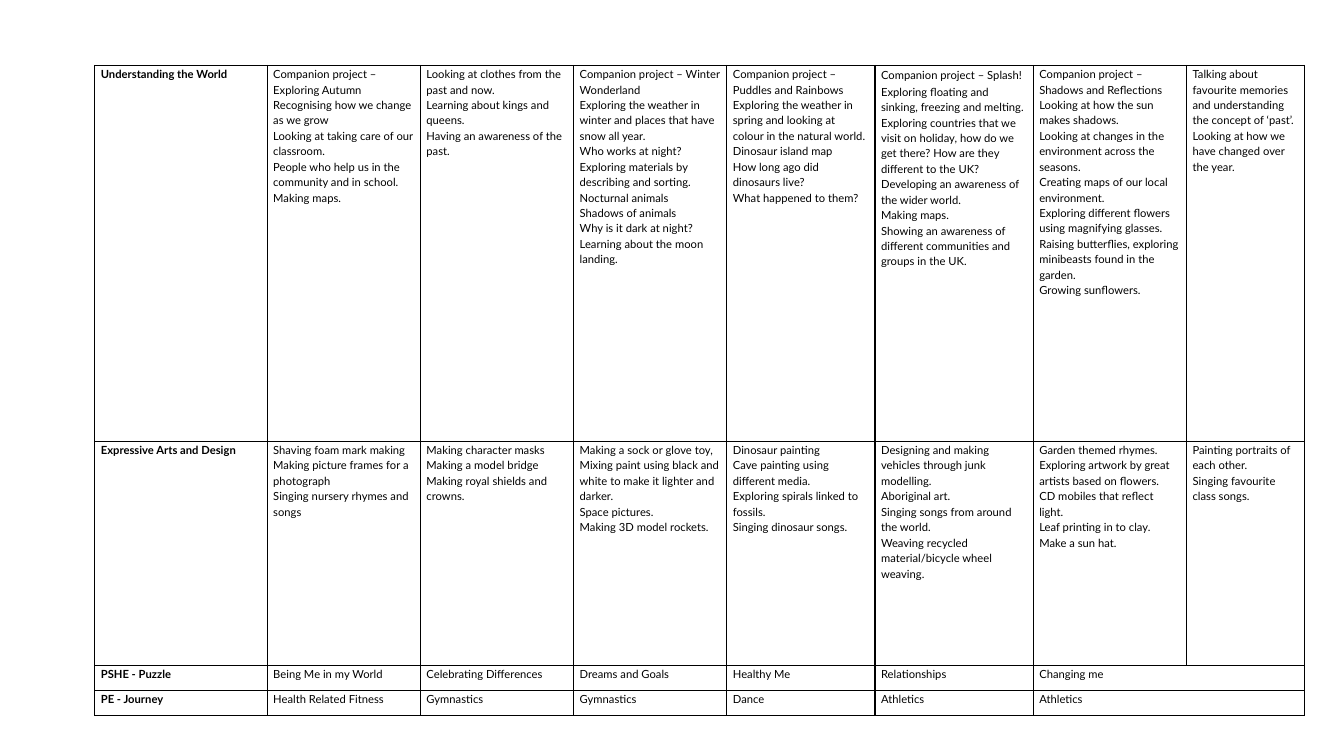
"""Build a slide with a yearly curriculum table."""
from dataclasses import dataclass

from lxml import etree
from pptx import Presentation
from pptx.dml.color import RGBColor
from pptx.oxml.ns import qn
from pptx.util import Inches, Pt

BLACK = RGBColor(0x00, 0x00, 0x00)
WHITE = RGBColor(0xFF, 0xFF, 0xFF)
FONT = "Lato"
SIZE = Pt(8)
WIDTHS = [1.71, 1.52, 1.52, 1.52, 1.47, 1.57, 1.52, 1.17]


@dataclass
class Strand:
    """A curriculum area with the topics of each half term."""
    name: str
    height: float
    terms: list[list[str]]


STRANDS = [
    Strand("Understanding the World", 3.73, [
        ["Companion project – Exploring Autumn",
         "Recognising how we change as we grow",
         "Looking at taking care of our classroom.",
         "People who help us in the community and in school.",
         "Making maps."],
        ["Looking at clothes from the past and now.",
         "Learning about kings and queens.",
         "Having an awareness of the past."],
        ["Companion project – Winter Wonderland",
         "Exploring the weather in winter and places that have snow all year.",
         "Who works at night?",
         "Exploring materials by describing and sorting.",
         "Nocturnal animals",
         "Shadows of animals",
         "Why is it dark at night?",
         "Learning about the moon landing."],
        ["Companion project – Puddles and Rainbows",
         "Exploring the weather in spring and looking at colour in the natural world.",
         "Dinosaur island map",
         "How long ago did dinosaurs live?",
         "What happened to them?"],
        ["Companion project – Splash! ",
         "Exploring floating and sinking, freezing and melting.",
         "Exploring countries that we visit on holiday, how do we get there? "
         "How are they different to the UK?",
         "Developing an awareness of the wider world.",
         "Making maps.",
         "Showing an awareness of different communities and groups in the UK."],
        ["Companion project – Shadows and Reflections",
         "Looking at how the sun makes shadows.",
         "Looking at changes in the environment across the seasons.",
         "Creating maps of our local environment.",
         "Exploring different flowers using magnifying glasses.",
         "Raising butterflies, exploring minibeasts found in the garden.",
         "Growing sunflowers."],
        ["Talking about favourite memories and understanding the concept of ‘past’.",
         "Looking at how we have changed over the year."],
    ]),
    Strand("Expressive Arts and Design", 2.22, [
        ["Shaving foam mark making",
         "Making picture frames for a photograph",
         "Singing nursery rhymes and songs"],
        ["Making character masks",
         "Making a model bridge",
         "Making royal shields and crowns."],
        ["Making a sock or glove toy,",
         "Mixing paint using black and white to make it lighter and darker.",
         "Space pictures.",
         "Making 3D model rockets."],
        ["Dinosaur painting",
         "Cave painting using different media.",
         "Exploring spirals linked to fossils.",
         "Singing dinosaur songs."],
        ["Designing and making vehicles through junk modelling.",
         "Aboriginal art.",
         "Singing songs from around the world.",
         "Weaving recycled material/bicycle wheel weaving."],
        ["Garden themed rhymes.",
         "Exploring artwork by great artists based on flowers.",
         "CD mobiles that reflect light.",
         "Leaf printing in to clay.",
         "Make a sun hat."],
        ["Painting portraits of each other.",
         "Singing favourite class songs."],
    ]),
    Strand("PSHE - Puzzle", 0.25, [
        ["Being Me in my World"], ["Celebrating Differences"],
        ["Dreams and Goals"], ["Healthy Me"], ["Relationships"],
        ["Changing me"]]),
    Strand("PE - Journey", 0.25, [
        ["Health Related Fitness"], ["Gymnastics"], ["Gymnastics"],
        ["Dance"], ["Athletics"], ["Athletics"]]),
]


def style(cell) -> None:
    """Give a cell its margins, borders and fill."""
    cell.margin_left = cell.margin_right = Inches(0.06)
    cell.margin_top = cell.margin_bottom = 0
    props = cell._tc.get_or_add_tcPr()
    for side in ("a:lnL", "a:lnR", "a:lnT", "a:lnB"):
        line = etree.SubElement(props, qn(side), w=str(Pt(1)))
        fill = etree.SubElement(line, qn("a:solidFill"))
        etree.SubElement(fill, qn("a:srgbClr"), val=str(BLACK))
    cell.fill.solid()
    cell.fill.fore_color.rgb = WHITE


def write(cell, lines: list[str], bold: bool = False) -> None:
    """Write one paragraph per line into a cell."""
    frame = cell.text_frame
    for i, line in enumerate(lines):
        para = frame.add_paragraph() if i else frame.paragraphs[0]
        para.line_spacing = 1.15
        font = para.font
        font.name, font.size, font.bold = FONT, SIZE, bold
        font.color.rgb = BLACK
        text = line.rstrip()
        para.add_run().text = text
        if text != line:
            tail = para.add_run()
            tail.text = " "
            tail.font.name, tail.font.size = "Calibri", Pt(9)


def main() -> None:
    """Build and save the slide."""
    deck = Presentation()
    deck.slide_width, deck.slide_height = Inches(13.33), Inches(7.5)
    slide = deck.slides.add_slide(deck.slide_layouts[6])
    table = slide.shapes.add_table(
        len(STRANDS), len(WIDTHS), Inches(0.94), Inches(0.65),
        Inches(12), Inches(6.45)).table
    table.first_row = table.horz_banding = False
    for col, width in zip(table.columns, WIDTHS):
        col.width = Inches(width)
    for r, strand in enumerate(STRANDS):
        table.rows[r].height = Inches(strand.height)
        for c in range(len(WIDTHS)):
            style(table.cell(r, c))
        write(table.cell(r, 0), [strand.name], bold=True)
        for c, lines in enumerate(strand.terms, 1):
            write(table.cell(r, c), lines)
        last = len(strand.terms)
        if last < len(WIDTHS) - 1:
            table.cell(r, last).merge(table.cell(r, len(WIDTHS) - 1))
    deck.save("out.pptx")


if __name__ == "__main__":
    main()
